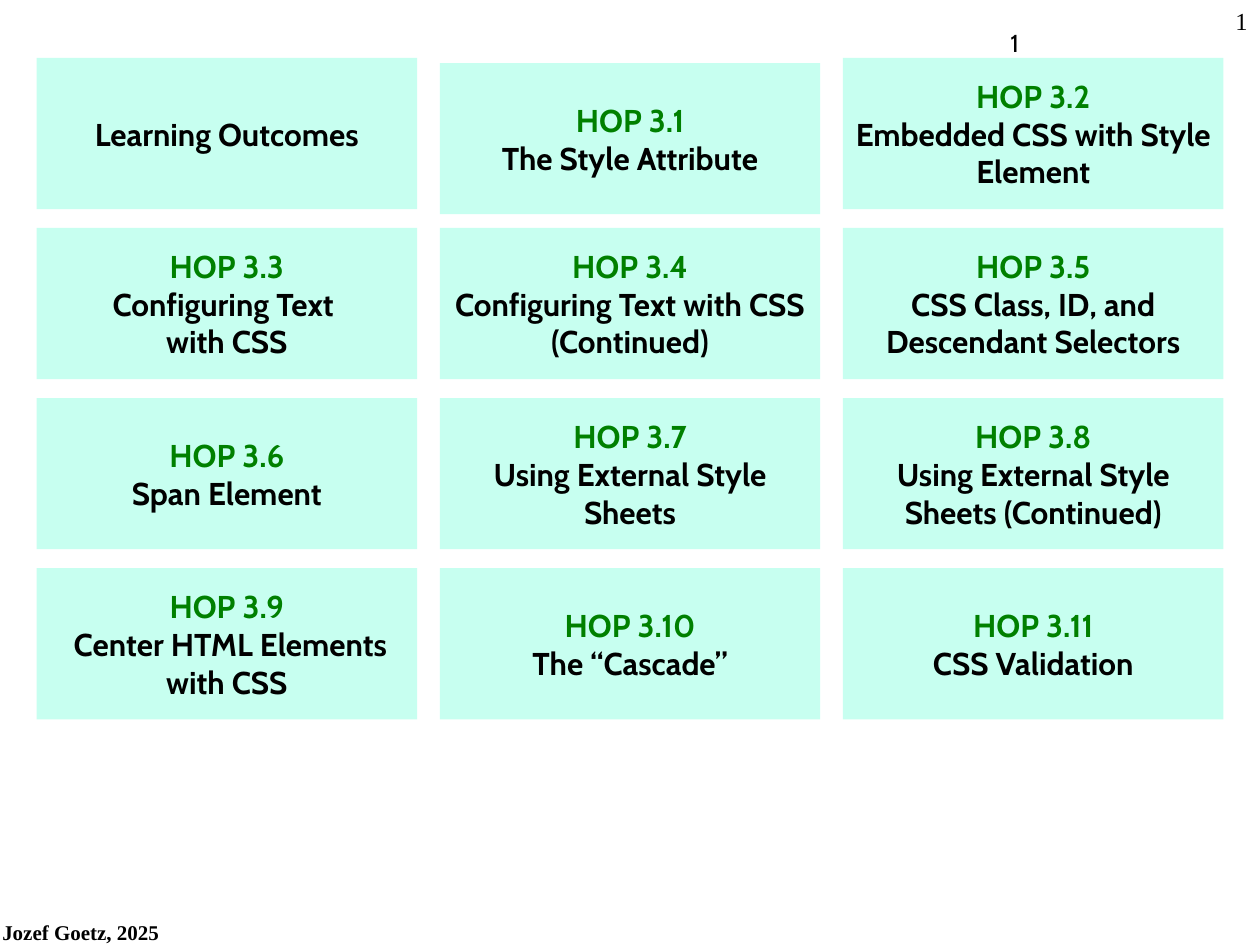
from pptx import Presentation
from pptx.dml.color import RGBColor
from pptx.enum.shapes import MSO_SHAPE
from pptx.enum.text import MSO_ANCHOR, PP_ALIGN
from pptx.util import Inches, Pt

RECTANGLE = MSO_SHAPE.RECTANGLE
TOP, MIDDLE, BOTTOM = MSO_ANCHOR.TOP, MSO_ANCHOR.MIDDLE, MSO_ANCHOR.BOTTOM
LEFT, CENTER, RIGHT = PP_ALIGN.LEFT, PP_ALIGN.CENTER, PP_ALIGN.RIGHT

TOPICS = [
    "Learning Outcomes",
    "The Style Attribute",
    "Embedded CSS with Style Element",
    "Configuring Text \nwith CSS",
    "Configuring Text with CSS (Continued)",
    "CSS Class, ID, and Descendant Selectors",
    "Span Element",
    "Using External Style Sheets",
    "Using External Style Sheets (Continued)",
    " Center HTML Elements with CSS",
    "The “Cascade”",
    "CSS Validation",
]


def color(value):
    return RGBColor.from_string(value)


class OutlinePage:
    """Card grid and small labels; card places are in columns and rows."""

    width, height = 10, 7.5
    grid_left, grid_top = 0.29, 0.46
    column_step, row_step = 3.2, 1.35
    card_width, card_height = 3.02, 1.2
    card_fill, heading_color, text_color = "C7FFF0", "008000", "000000"
    card_font, plain_font = "Cabin", "Times New Roman"

    def __init__(self, deck):
        deck.slide_width = Inches(self.width)
        deck.slide_height = Inches(self.height)
        self.page = deck.slides.add_slide(deck.slide_layouts[6])

    def set_text(self, para, text, font, size, ink, bold=False, align=LEFT):
        para.text = text
        para.alignment = align
        para.font.name = font
        para.font.size = Pt(size)
        para.font.bold = bold
        para.font.color.rgb = color(ink)

    def card(self, column, row, topic, heading=None):
        box = self.page.shapes.add_shape(
            RECTANGLE,
            Inches(self.grid_left + column * self.column_step),
            Inches(self.grid_top + row * self.row_step),
            Inches(self.card_width),
            Inches(self.card_height),
        )
        box.shadow.inherit = False
        box.fill.solid()
        box.fill.fore_color.rgb = color(self.card_fill)
        box.line.fill.background()
        frame = box.text_frame
        frame.word_wrap = True
        frame.vertical_anchor = MIDDLE
        para = frame.paragraphs[0]
        if heading:
            self.set_text(para, heading, self.card_font, 18, self.heading_color, True, CENTER)
            para = frame.add_paragraph()
        self.set_text(para, topic, self.card_font, 18, self.text_color, True, CENTER)

    def label(self, text, place, font, size, bold=False, align=LEFT, anchor=TOP, wrap=True):
        """Add a text box; place is left, top, width, height as shares of the slide."""
        left, top, width, height = place
        box = self.page.shapes.add_textbox(
            Inches(left * self.width),
            Inches(top * self.height),
            Inches(width * self.width),
            Inches(height * self.height),
        )
        frame = box.text_frame
        frame.word_wrap = wrap
        frame.vertical_anchor = anchor
        self.set_text(frame.paragraphs[0], text, font, size, self.text_color, bold, align)


def main():
    deck = Presentation()
    outline = OutlinePage(deck)
    outline.label("Jozef Goetz, 2025", (-0.008, 0.967, 0.146, 0.04),
                  outline.plain_font, 12, bold=True, wrap=False)
    outline.label("1", (0.95, 0, 0.05, 0.067), outline.plain_font, 14, align=RIGHT)
    outline.label("1", (0.792, 0, 0.203, 0.067), outline.card_font, 14, anchor=BOTTOM)
    for number, topic in enumerate(TOPICS):
        row, column = divmod(number, 3)
        heading = f"HOP 3.{number}" if number else None
        lowered = 0.03 if number == 1 else 0  # the HOP 3.1 card sits slightly lower
        outline.card(column, row + lowered, topic, heading)
    deck.save("out.pptx")


if __name__ == "__main__":
    main()
